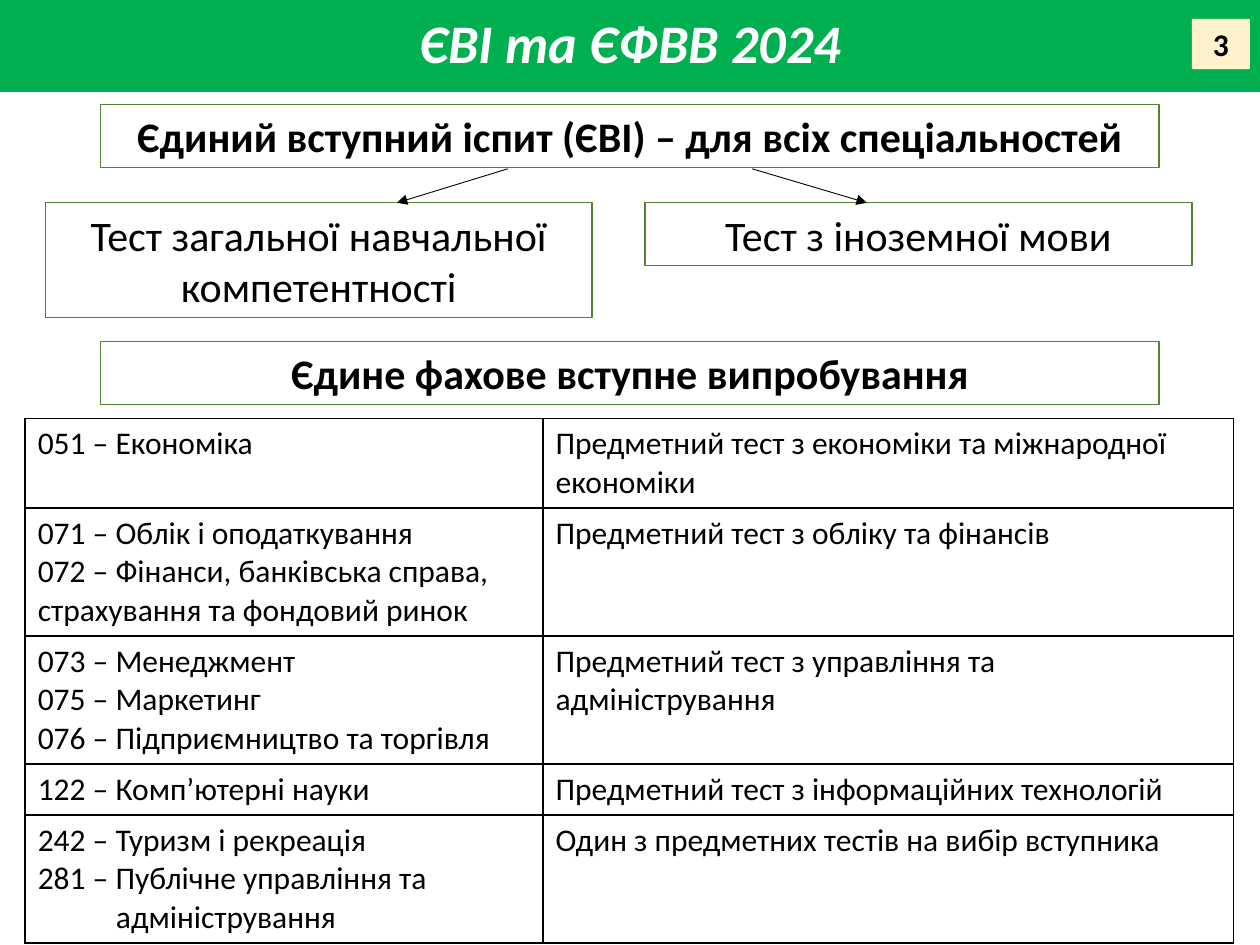
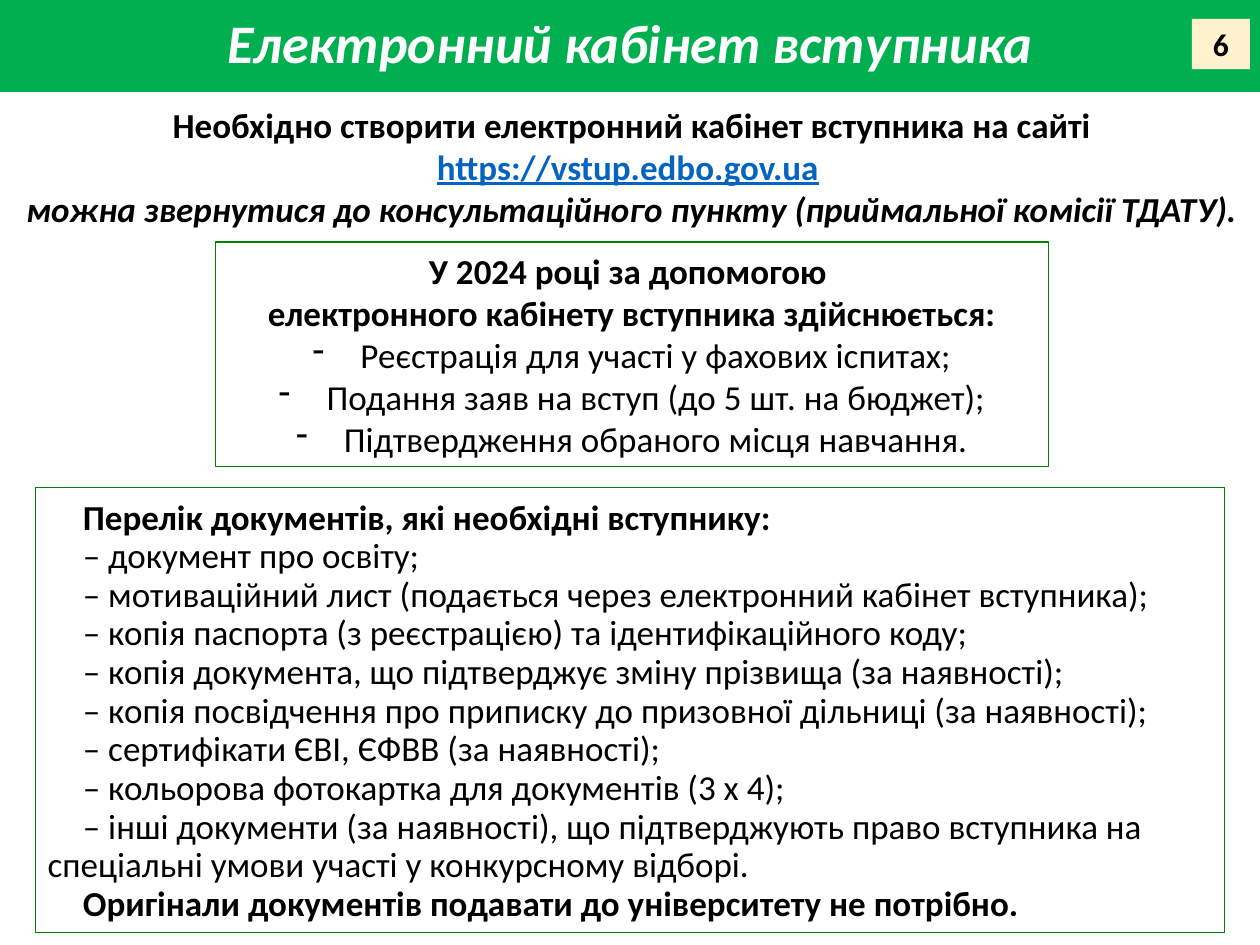
"""Build two slides on admission exams and the applicant's electronic account."""
import dataclasses

import lxml.etree
import pptx
import pptx.dml.color
import pptx.enum.shapes
import pptx.enum.text
import pptx.oxml.ns
import pptx.util

Inches = pptx.util.Inches
ALIGN = pptx.enum.text.PP_ALIGN


@dataclasses.dataclass(frozen=True)
class Theme:
    """Colours, font and type sizes shared by the slides."""
    font: str = "Calibri"
    band: str = "00B050"
    badge: str = "FFF2CC"
    exam_border: str = "548235"
    account_border: str = "008000"
    text: str = "000000"
    title_text: str = "FFFFFF"
    link: str = "0563C1"
    title_size: int = 31
    heading_size: int = 24
    body_size: int = 20
    small_size: int = 18


THEME = Theme()


@dataclasses.dataclass
class Run:
    """A stretch of text in one style."""
    text: str
    bold: bool = False
    italic: bool = False
    underline: bool = False
    color: str = THEME.text


@dataclasses.dataclass
class Paragraph:
    """Runs with their alignment, spacing and indents in inches."""
    runs: list
    align: ALIGN = ALIGN.CENTER
    line_spacing: float = 1.0
    margin: float = 0
    indent: float = 0
    bullet: str = ""


def rgb(color):
    """Turn a hex string into a colour."""
    return pptx.dml.color.RGBColor.from_string(color)


def add_xml(parent, tag, **attributes):
    """Append a DrawingML element to its parent."""
    return lxml.etree.SubElement(parent, pptx.oxml.ns.qn(tag), **attributes)


def line(text, bold=False, **layout):
    """Make a paragraph of a single run."""
    return Paragraph([Run(text, bold)], **layout)


def fill_text(frame, paragraphs, size):
    """Write paragraphs into a text frame run by run."""
    frame.word_wrap = True
    for index, content in enumerate(paragraphs):
        paragraph = frame.add_paragraph() if index else frame.paragraphs[0]
        paragraph.alignment = content.align
        paragraph.line_spacing = content.line_spacing
        properties = paragraph._p.get_or_add_pPr()
        properties.set("marL", str(Inches(content.margin)))
        properties.set("indent", str(Inches(content.indent)))
        if content.bullet:
            add_xml(properties, "a:buChar", char=content.bullet)
        for part in content.runs:
            run = paragraph.add_run()
            run.text = part.text
            run.font.name = THEME.font
            run.font.size = pptx.util.Pt(size)
            run.font.bold = part.bold
            run.font.italic = part.italic
            run.font.underline = part.underline
            run.font.color.rgb = rgb(part.color)


def add_box(slide, place, paragraphs, size, fill=None, border=None):
    """Add a rectangle with text, an optional fill and an optional border."""
    shape = slide.shapes.add_shape(
        pptx.enum.shapes.MSO_SHAPE.RECTANGLE, *map(Inches, place))
    shape.shadow.inherit = False
    if fill:
        shape.fill.solid()
        shape.fill.fore_color.rgb = rgb(fill)
    else:
        shape.fill.background()
    if border:
        shape.line.color.rgb = rgb(border)
        shape.line.width = pptx.util.Pt(0.75)
    else:
        shape.line.fill.background()
    shape.text_frame.vertical_anchor = pptx.enum.text.MSO_ANCHOR.MIDDLE
    fill_text(shape.text_frame, paragraphs, size)


def add_text(slide, place, paragraphs, size):
    """Add a plain text box."""
    box = slide.shapes.add_textbox(*map(Inches, place))
    fill_text(box.text_frame, paragraphs, size)


def add_arrow(slide, start, end):
    """Add a thin straight arrow."""
    connector = slide.shapes.add_connector(
        pptx.enum.shapes.MSO_CONNECTOR.STRAIGHT, *map(Inches, start + end))
    connector.line.color.rgb = rgb(THEME.text)
    connector.line.width = pptx.util.Pt(0.5)
    add_xml(connector.line._get_or_add_ln(), "a:tailEnd", type="triangle")
    add_xml(connector._element.spPr, "a:effectLst")


def style_cell(cell):
    """Clear the fill of a cell and draw its four borders."""
    properties = cell._tc.get_or_add_tcPr()
    for side in ("a:lnL", "a:lnR", "a:lnT", "a:lnB"):
        border = add_xml(properties, side, w=str(pptx.util.Pt(1)))
        add_xml(add_xml(border, "a:solidFill"), "a:srgbClr", val=THEME.text)
    cell.fill.background()


def add_table(slide, left, top, widths, rows):
    """Add a bordered table; each row gives its line count and its cells."""
    heights = [0.1 + 0.3 * line_count for line_count, _ in rows]
    frame = slide.shapes.add_table(
        len(rows), len(widths),
        *map(Inches, (left, top, sum(widths), sum(heights))))
    table = frame.table
    table.first_row = table.horz_banding = False
    for column, width in zip(table.columns, widths):
        column.width = Inches(width)
    for row, height, (_, cells) in zip(table.rows, heights, rows):
        row.height = Inches(height)
        for cell, paragraphs in zip(row.cells, cells):
            style_cell(cell)
            fill_text(cell.text_frame, paragraphs, THEME.small_size)


def add_slide(presentation, title, number):
    """Add a blank slide with the title band and the number badge."""
    slide = presentation.slides.add_slide(presentation.slide_layouts[6])
    heading = Run(title, bold=True, italic=True, color=THEME.title_text)
    add_box(slide, (0, 0, 10, 0.73), [Paragraph([heading], line_spacing=0.9)],
            THEME.title_size, fill=THEME.band)
    add_box(slide, (9.46, 0.15, 0.46, 0.4), [line(str(number), bold=True)],
            THEME.small_size, fill=THEME.badge)
    return slide


def build_exams(presentation):
    """Build the slide on exams and subject tests."""
    slide = add_slide(presentation, "ЄВІ та ЄФВВ 2024", 3)
    boxes = [
        ((0.8, 0.83, 8.4, 0.5),
         "Єдиний вступний іспит (ЄВІ) – для всіх спеціальностей", True),
        ((0.36, 1.61, 4.34, 0.91),
         "Тест загальної навчальної компетентності", False),
        ((5.12, 1.61, 4.34, 0.5), "Тест з іноземної мови", False),
        ((0.8, 2.71, 8.4, 0.5), "Єдине фахове вступне випробування", True),
    ]
    for place, text, bold in boxes:
        add_box(slide, place, [line(text, bold)], THEME.heading_size,
                border=THEME.exam_border)
    add_arrow(slide, (4.03, 1.34), (3.15, 1.61))
    add_arrow(slide, (5.97, 1.34), (6.88, 1.61))

    subjects = [
        (2, ["051 – Економіка"],
         "Предметний тест з економіки та міжнародної економіки"),
        (3, ["071 – Облік і оподаткування",
             "072 – Фінанси, банківська справа, страхування та фондовий ринок"],
         "Предметний тест з обліку та фінансів"),
        (3, ["073 – Менеджмент", "075 – Маркетинг",
             "076 – Підприємництво та торгівля"],
         "Предметний тест з управління та адміністрування"),
        (1, ["122 – Комп’ютерні науки"],
         "Предметний тест з інформаційних технологій"),
        (3, ["242 – Туризм і рекреація", "281 – Публічне управління та",
             "адміністрування"],
         "Один з предметних тестів на вибір вступника"),
    ]
    rows = [
        (line_count, ([line(text, align=ALIGN.LEFT) for text in specialities],
                      [line(test, align=ALIGN.LEFT)]))
        for line_count, specialities, test in subjects]
    continuation = rows[-1][1][0][-1]
    continuation.margin = 0.62
    add_table(slide, 0.2, 3.32, (4.11, 5.48), rows)


def build_account(presentation):
    """Build the slide on the electronic account and the documents."""
    slide = add_slide(presentation, "Електронний кабінет вступника", 6)
    add_text(slide, (0.11, 0.77, 9.81, 1.11), [
        Paragraph([
            Run("Необхідно створити електронний кабінет вступника на сайті ",
                bold=True),
            Run("https://vstup.edbo.gov.ua", bold=True, underline=True,
                color=THEME.link),
            Run(" ", bold=True)]),
        Paragraph([
            Run("можна звернутися до консультаційного пункту "
                "(приймальної комісії ТДАТУ).", bold=True, italic=True)]),
    ], THEME.body_size)

    headings = ["У 2024 році за допомогою ",
                "електронного кабінету вступника здійснюється:"]
    services = ["Реєстрація для участі у фахових іспитах;",
                "Подання заяв на вступ (до 5 шт. на бюджет);",
                "Підтвердження обраного місця навчання."]
    add_box(slide, (1.71, 1.92, 6.61, 1.78),
            [line(text, bold=True) for text in headings]
            + [line(text, margin=0.38, indent=-0.38, bullet="-")
               for text in services],
            THEME.body_size, border=THEME.account_border)

    documents = [
        "документ про освіту;",
        "мотиваційний лист (подається через електронний кабінет вступника);",
        "копія паспорта (з реєстрацією) та ідентифікаційного коду;",
        "копія документа, що підтверджує зміну прізвища (за наявності);",
        "копія посвідчення про приписку до призовної дільниці (за наявності);",
        "сертифікати ЄВІ, ЄФВВ (за наявності);",
        "кольорова фотокартка для документів (3 х 4);",
        "інші документи (за наявності), що підтверджують право вступника на "
        "спеціальні умови участі у конкурсному відборі.",
    ]
    add_box(slide, (0.28, 3.87, 9.44, 3.53), [
        line("Перелік документів, які необхідні вступнику:", bold=True,
             align=ALIGN.JUSTIFY, indent=0.28),
        *(line(f"– {text}", align=ALIGN.LEFT, indent=0.28, line_spacing=0.92)
          for text in documents),
        line("Оригінали документів подавати до університету не потрібно.",
             bold=True, align=ALIGN.JUSTIFY, indent=0.28, line_spacing=0.92),
    ], THEME.body_size, border=THEME.account_border)


def main():
    """Create the presentation and save it."""
    presentation = pptx.Presentation()
    presentation.slide_width = Inches(10)
    presentation.slide_height = Inches(7.5)
    build_exams(presentation)
    build_account(presentation)
    presentation.save("out.pptx")


if __name__ == "__main__":
    main()
